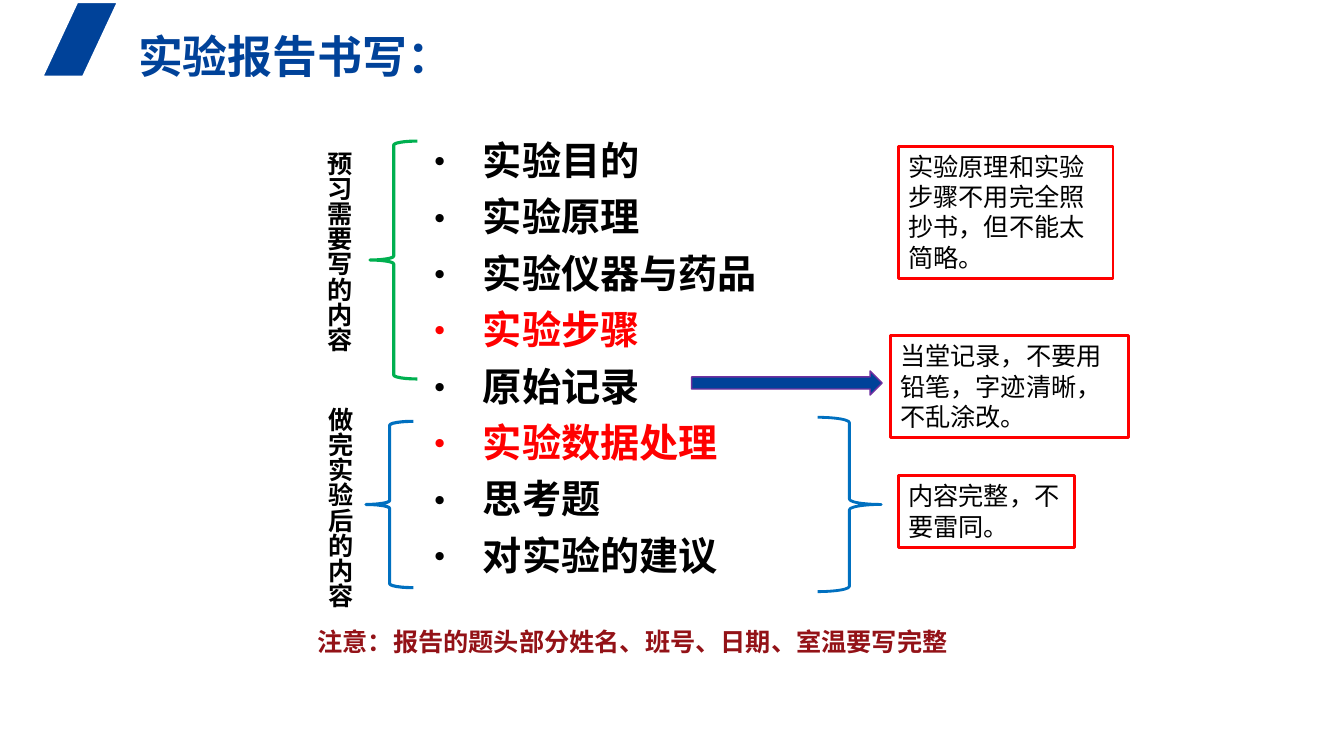
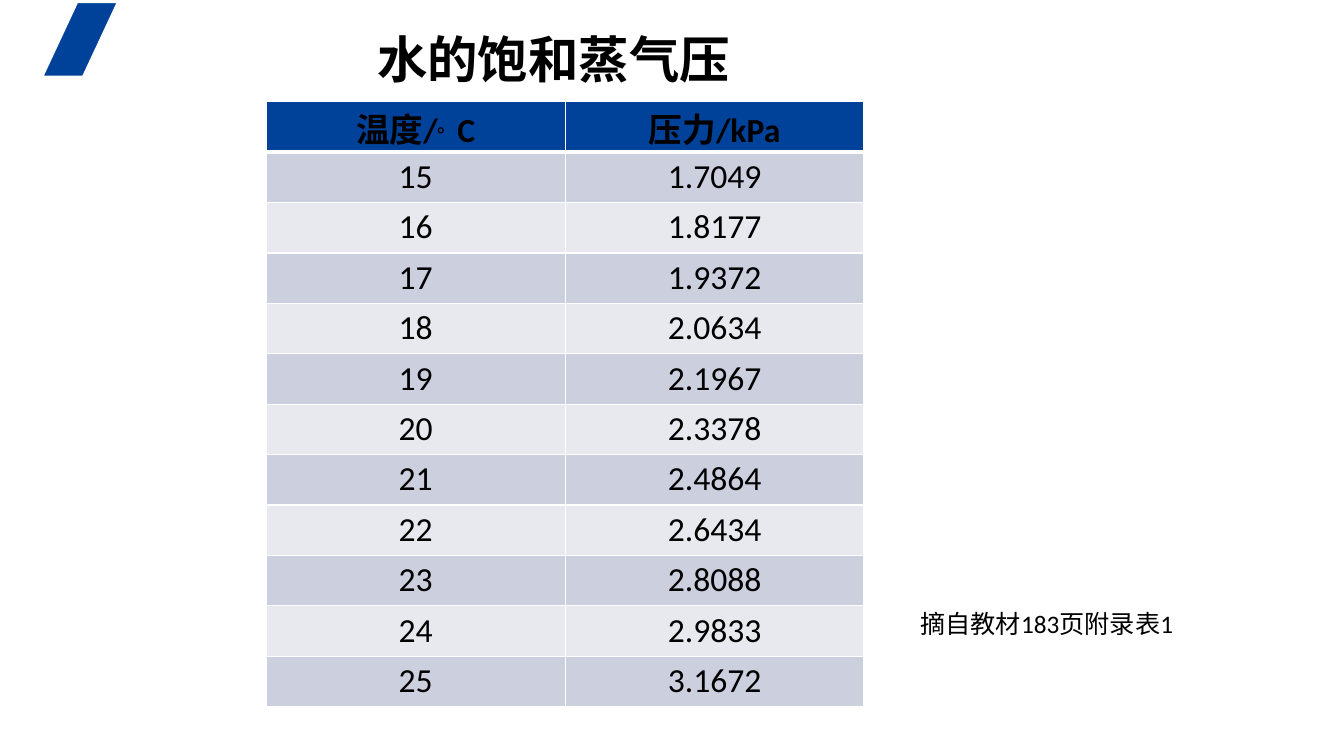
import dataclasses

import pptx
import pptx.dml.color
import pptx.enum.shapes
import pptx.enum.text
import pptx.oxml
import pptx.oxml.ns
import pptx.util
from pptx.util import Inches, Pt

SHAPE = pptx.enum.shapes.MSO_SHAPE
ANCHOR = pptx.enum.text.MSO_ANCHOR
ALIGN = pptx.enum.text.PP_ALIGN
NS = pptx.oxml.ns.nsdecls("a")


@dataclasses.dataclass(frozen=True)
class Theme:
    blue: str = "004299"
    black: str = "000000"
    white: str = "FFFFFF"
    red: str = "FF0000"
    dark_red: str = "931217"
    green: str = "00B050"
    sky: str = "0070C0"
    purple: str = "7030A0"
    bands: tuple = ("CCCFDE", "E7E9EF")
    latin: str = "Calibri"
    heading: str = "Arial"
    cjk: str = "Noto Sans CJK SC"
    title: int = 32
    table_title: int = 36
    list: int = 28
    table: int = 24
    text: int = 18
    leading: float = 1.2


def rgb(value):
    return pptx.dml.color.RGBColor.from_string(value)


def place(shape, at):
    shape.left, shape.top, shape.width, shape.height = map(Inches, at)


class Deck:
    def __init__(self, theme):
        self.t = theme
        self.prs = pptx.Presentation()
        self.prs.slide_width, self.prs.slide_height = Inches(13.33), Inches(7.5)
        self.s = None

    def slide(self, layout):
        first = self.s is None
        self.s = self.prs.slides.add_slide(self.prs.slide_layouts.get_by_name(layout))
        if first:
            self.master_badge()

    def master_badge(self):
        """Put the corner parallelogram on the master, behind every slide."""
        badge = self.shape(SHAPE.PARALLELOGRAM, (0.42, 0.02, 0.75, 0.74),
                           self.t.blue, self.t.white, 1.5)
        badge.adjustments[0] = 0.467
        badge.element.nvSpPr.cNvPr.set("id", "20")
        self.prs.slide_master.shapes.element.append(badge.element)

    def run(self, p, text, size, color=None, bold=False, font=None):
        r = p.add_run()
        r.text = text
        r.font.size, r.font.bold = Pt(size), bold
        r.font.color.rgb = rgb(color or self.t.black)
        r.font.name = font or self.t.latin
        r.font._element.append(
            pptx.oxml.parse_xml(f'<a:ea {NS} typeface="{self.t.cjk}"/>'))
        return r

    def frame(self, shape):
        tf = shape.text_frame
        tf.word_wrap = True
        tf.auto_size = pptx.enum.text.MSO_AUTO_SIZE.NONE
        tf.vertical_anchor = ANCHOR.TOP
        return tf

    def line(self, tf, text, size, **style):
        """Fill the first paragraph with one left-aligned run."""
        p = tf.paragraphs[0]
        p.alignment = ALIGN.LEFT
        p.line_spacing = Pt(size * self.t.leading)
        self.run(p, text, size, **style)

    def title(self, text, at, size, **style):
        place(self.s.shapes.title, at)
        self.line(self.frame(self.s.shapes.title), text, size, bold=True, **style)

    def bullets(self, items, at, highlights):
        body = self.s.placeholders[1]
        place(body, at)
        body.fill.solid()
        body.fill.fore_color.rgb = rgb(self.t.white)
        tf = self.frame(body)
        for i, item in enumerate(items):
            p = tf.add_paragraph() if i else tf.paragraphs[0]
            pPr = p._p.get_or_add_pPr()
            pPr.set("marL", str(Inches(0.62)))
            pPr.set("indent", str(Inches(-0.62)))
            for bullet in (f'<a:buFont {NS} typeface="{self.t.cjk}"/>',
                           f'<a:buChar {NS} char="•"/>'):
                pPr.append(pptx.oxml.parse_xml(bullet))
            p.line_spacing = Pt(self.t.list * self.t.leading * 0.9)
            p.space_before = Pt(10 if i else 0)
            self.run(p, item, self.t.list, bold=True, font=self.t.cjk,
                     color=self.t.red if item in highlights else None)

    def shape(self, kind, at, fill=None, line=None, width=1):
        sp = self.s.shapes.add_shape(kind, *map(Inches, at))
        sp.shadow.inherit = False
        if fill:
            sp.fill.solid()
            sp.fill.fore_color.rgb = rgb(fill)
        else:
            sp.fill.background()
        if line:
            sp.line.color.rgb = rgb(line)
            sp.line.width = Pt(width)
        else:
            sp.line.fill.background()
        return sp

    def note(self, text, at):
        sp = self.shape(SHAPE.RECTANGLE, at, line=self.t.red, width=2)
        self.line(self.frame(sp), text, self.t.text)

    def vertical_label(self, text, at):
        tf = self.frame(self.shape(SHAPE.RECTANGLE, at, self.t.white))
        tf._txBody.bodyPr.set("vert", "eaVert")
        tf.margin_right = Inches(0.03)
        p = tf.paragraphs[0]
        p.alignment = ALIGN.LEFT
        self.run(p, text, self.t.text, bold=True, font=self.t.cjk)

    def text(self, text, at, **style):
        sp = self.s.shapes.add_textbox(*map(Inches, at))
        self.line(self.frame(sp), text, self.t.text, **style)

    def cell(self, cell, fill, parts, header, below_header):
        widths = {"L": 1, "R": 1, "T": 3 if below_header else 1, "B": 3 if header else 1}
        tcPr = cell._tc.get_or_add_tcPr()
        for side, width in widths.items():
            tcPr.append(pptx.oxml.parse_xml(
                f'<a:ln{side} {NS} w="{Pt(width)}"><a:solidFill>'
                f'<a:srgbClr val="{self.t.white}"/></a:solidFill></a:ln{side}>'))
        cell.fill.solid()
        cell.fill.fore_color.rgb = rgb(fill)
        cell.margin_top = cell.margin_bottom = Inches(0 if header else 0.04)
        cell.vertical_anchor = ANCHOR.BOTTOM if header else ANCHOR.MIDDLE
        p = cell.text_frame.paragraphs[0]
        p.alignment = ALIGN.CENTER
        p.line_spacing = Pt(self.t.table * self.t.leading)
        for part in parts:
            r = self.run(p, part, self.t.table, bold=header)
            if part == "。":
                r.font._element.set("baseline", "30000")

    def table(self, header, rows, at):
        grid = [header] + [[[value] for value in row] for row in rows]
        table = self.s.shapes.add_table(len(grid), len(header), *map(Inches, at)).table
        table.first_row = table.horz_banding = False
        for i, row in enumerate(grid):
            fill = self.t.bands[(i - 1) % 2] if i else self.t.blue
            for j, parts in enumerate(row):
                self.cell(table.cell(i, j), fill, parts, i == 0, i == 1)


def report_slide(d):
    t = d.t
    d.slide("Title and Content")
    d.title("实验报告书写：", (1.27, 0.23, 10.65, 0.64), t.title,
            color=t.blue, font=t.heading)
    d.bullets(["实验目的", "实验原理", "实验仪器与药品", "实验步骤", "原始记录",
               "实验数据处理", "思考题", "对实验的建议"],
              (4.07, 1.35, 4.41, 4.67), ("实验步骤", "实验数据处理"))
    for text, at in (("预习需要写的内容", (3.04, 1.4, 0.5, 2.2)),
                     ("做完实验后的内容", (3.05, 3.94, 0.5, 2.2))):
        d.vertical_label(text, at)
    for kind, at, color, width in (
            (SHAPE.LEFT_BRACE, (3.67, 1.4, 0.47, 2.36), t.green, 2.25),
            (SHAPE.LEFT_BRACE, (3.63, 4.18, 0.47, 1.65), t.sky, 2.25),
            (SHAPE.RIGHT_BRACE, (8.11, 4.14, 0.63, 1.73), t.sky, 2)):
        d.shape(kind, at, line=color, width=width)
    for text, at in (
            ("实验原理和实验步骤不用完全照抄书，但不能太简略。", (8.91, 1.45, 2.13, 1.31)),
            ("当堂记录，不要用铅笔，字迹清晰，不乱涂改。", (8.83, 3.33, 2.36, 1.01)),
            ("内容完整，不要雷同。", (8.91, 4.72, 1.75, 0.71))):
        d.note(text, at)
    d.shape(SHAPE.RIGHT_ARROW, (6.86, 3.68, 1.89, 0.24), t.blue, t.purple)
    d.text("注意：报告的题头部分姓名、班号、日期、室温要写完整",
           (3.05, 6.16, 7.24, 0.4), color=t.dark_red, bold=True)


def pressure_slide(d):
    d.slide("Title Only")
    d.title("水的饱和蒸气压", (3.64, 0.23, 3.74, 0.71), d.t.table_title)
    pressures = ["1.7049", "1.8177", "1.9372", "2.0634", "2.1967", "2.3378",
                 "2.4864", "2.6434", "2.8088", "2.9833", "3.1672"]
    rows = [(str(degree), value) for degree, value in enumerate(pressures, 15)]
    d.table([["温度/", "。", "C"], ["压力/kPa"]], rows, (2.64, 1.01, 5.93, 6))
    d.text("摘自教材183页附录表1", (9.03, 5.99, 2.9, 0.4))


def main():
    d = Deck(Theme())
    report_slide(d)
    pressure_slide(d)
    d.prs.save("out.pptx")


if __name__ == "__main__":
    main()
